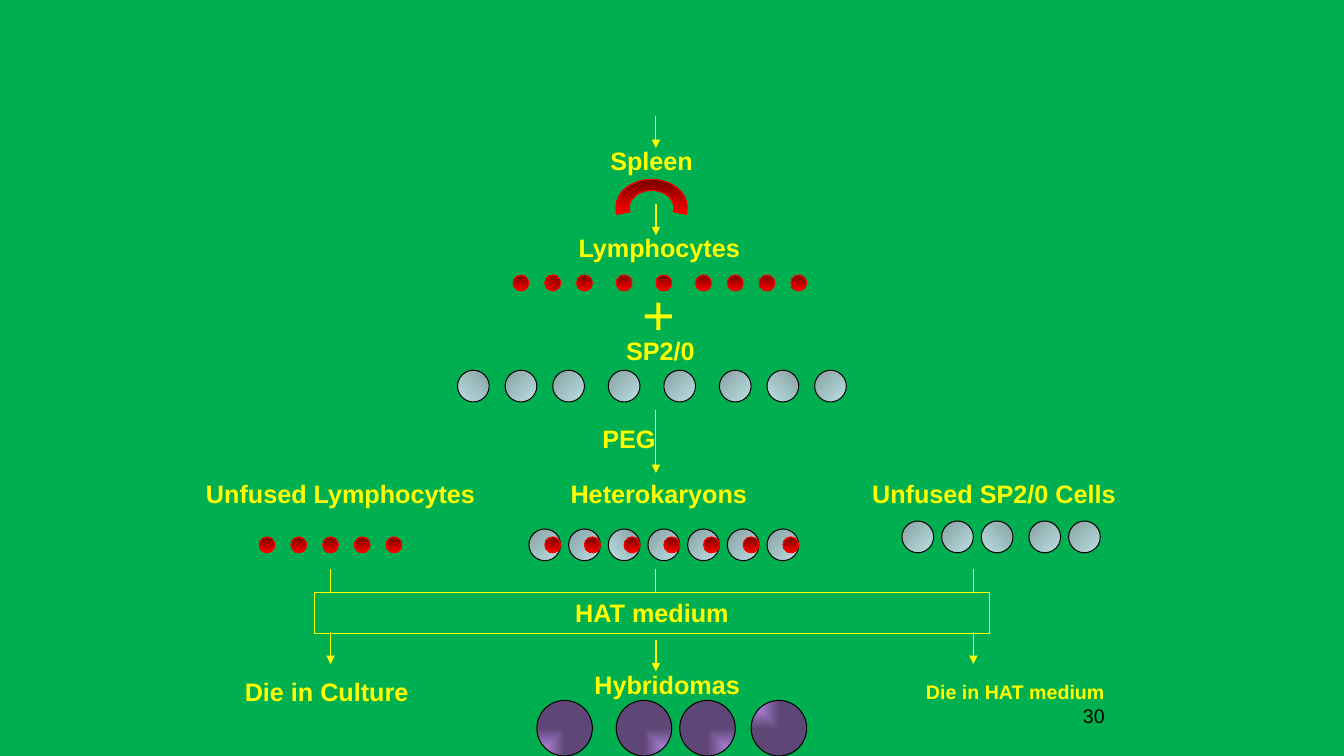
import math
from itertools import accumulate
from lxml import etree
from pptx import Presentation, util as u
from pptx.dml.color import RGBColor
from pptx.enum import shapes, text
from pptx.oxml import ns, parse_xml

GREEN = RGBColor(0x00, 0xB0, 0x50)
YELLOW = RGBColor(0xFF, 0xFF, 0x00)
BLACK = RGBColor(0x00, 0x00, 0x00)
RED = RGBColor(0xFF, 0x00, 0x00)
DARK_RED = RGBColor(0x76, 0x00, 0x00)
PALE = RGBColor(0xBB, 0xE0, 0xE3)
GREY = RGBColor(0x86, 0xA0, 0xA2)
LILAC = RGBColor(0xCC, 0x99, 0xFF)
PURPLE = RGBColor(0x5E, 0x47, 0x76)
LEFT, CENTER, RIGHT = text.PP_ALIGN.LEFT, text.PP_ALIGN.CENTER, text.PP_ALIGN.RIGHT

DOWN = '<a:lin ang="5400000" scaled="1"/>'
DIAGONAL = '<a:lin ang="2700000" scaled="1"/>'
DIAGONAL_UP = '<a:lin ang="18900000" scaled="1"/>'


def paint(shape, start, end, direction, outline):
    """Give a shape a two-colour gradient and a thin outline."""
    shape.shadow.inherit = False
    shape.line.color.rgb = outline
    shape.line.width = u.Pt(0.75)
    gradient = parse_xml(
        f'<a:gradFill {ns.nsdecls("a")} rotWithShape="1"><a:gsLst>'
        f'<a:gs pos="0"><a:srgbClr val="{start}"/></a:gs>'
        f'<a:gs pos="100000"><a:srgbClr val="{end}"/></a:gs>'
        f'</a:gsLst>{direction}</a:gradFill>')
    shape.line._ln.addprevious(gradient)


def write(frame, content, align, size=18, bold=True, color=YELLOW, new=False):
    """Write one run in the first paragraph or in a new one."""
    paragraph = frame.add_paragraph() if new else frame.paragraphs[0]
    paragraph.alignment = align
    run = paragraph.add_run()
    run.text = content
    run.font.name = "Arial"
    run.font.size = u.Pt(size)
    run.font.bold = bold
    run.font.color.rgb = color


presentation = Presentation()
presentation.slide_width, presentation.slide_height = u.Cm(33.87), u.Cm(19.05)
slide = presentation.slides.add_slide(presentation.slide_layouts[6])
slide.background.fill.solid()
slide.background.fill.fore_color.rgb = GREEN

# Spleen: a thick arch between two ellipses
points = []
for radius_x, radius_y, angles in ((0.9, 0.71, range(-14, 195, 4)),
                                   (0.56, 0.43, range(194, -15, -4))):
    for angle in angles:
        points.append((u.Cm(16.42 + radius_x * math.cos(math.radians(angle))),
                       u.Cm(5.23 - radius_y * math.sin(math.radians(angle)))))
builder = slide.shapes.build_freeform(*points[0])
builder.add_line_segments(points[1:], close=True)
paint(builder.convert_to_shape(), DARK_RED, RED, DOWN, RED)

# Rows of cells: left, top, diameter, gaps, colours, direction, outline, mirrored cells
lymphocyte = (DARK_RED, RED, DOWN, RED)
myeloma = (GREY, PALE, DIAGONAL, BLACK)
cell_rows = [
    (12.93, 6.93, 0.4, [0.8, 0.8, 1, 1, 1, 0.8, 0.8, 0.8], lymphocyte, [1]),
    (11.53, 9.33, 0.8, [1.2, 1.2, 1.4, 1.4, 1.4, 1.2, 1.2], myeloma, [0, 6]),
    (6.53, 13.53, 0.4, [0.8] * 4, lymphocyte, []),
    (13.33, 13.33, 0.8, [1] * 6, myeloma, [2]),
    (13.73, 13.53, 0.4, [1] * 6, lymphocyte, []),
    (22.73, 13.13, 0.8, [1, 1, 1.2, 1], myeloma, [2]),
]
for left, top, diameter, gaps, (start, end, direction, outline), mirrored in cell_rows:
    for index, x in enumerate(accumulate(gaps, initial=left)):
        cell = slide.shapes.add_shape(shapes.MSO_SHAPE.OVAL, u.Cm(x), u.Cm(top),
                                      u.Cm(diameter), u.Cm(diameter))
        if index in mirrored:
            paint(cell, end, start, DIAGONAL_UP, outline)
        else:
            paint(cell, start, end, direction, outline)

# Hybridomas, each lit from one corner
BOTTOM_LEFT, BOTTOM_RIGHT, TOP_LEFT = (0, 100, 100, 0), (100, 100, 0, 0), (0, 0, 100, 100)
for x, corner in ((13.53, BOTTOM_LEFT), (15.53, BOTTOM_RIGHT),
                  (17.13, BOTTOM_RIGHT), (18.93, TOP_LEFT)):
    hybridoma = slide.shapes.add_shape(shapes.MSO_SHAPE.OVAL, u.Cm(x), u.Cm(17.65),
                                       u.Cm(1.4), u.Cm(1.4))
    sides = " ".join(f'{side}="{value * 1000}"' for side, value in zip("ltrb", corner))
    focus = f'<a:path path="rect"><a:fillToRect {sides}/></a:path>'
    paint(hybridoma, LILAC, PURPLE, focus, BLACK)

# HAT medium bar
bar = slide.shapes.add_shape(shapes.MSO_SHAPE.RECTANGLE, u.Cm(7.93), u.Cm(14.93),
                             u.Cm(17), u.Cm(1.03))
bar.shadow.inherit = False
bar.fill.background()
bar.line.color.rgb = YELLOW
bar.line.width = u.Pt(0.75)
write(bar.text_frame, "HAT medium", CENTER)

# Arrows and plain lines: x, top, bottom, width, arrowhead
for x, top, bottom, width, arrow in (
        (16.53, 2.92, 3.73, 0.75, True), (16.53, 5.13, 5.93, 1.25, True),
        (16.53, 10.33, 11.92, 0.75, True), (16.53, 16.13, 16.92, 1.25, True),
        (8.33, 15.93, 16.73, 0.75, True), (24.53, 15.93, 16.73, 0.75, True),
        (8.33, 14.33, 14.93, 0.75, False), (16.53, 14.33, 14.93, 0.75, False),
        (24.53, 14.33, 14.93, 0.75, False)):
    line = slide.shapes.add_connector(shapes.MSO_CONNECTOR.STRAIGHT,
                                      u.Cm(x), u.Cm(top), u.Cm(x), u.Cm(bottom))
    line.line.color.rgb = YELLOW
    line.line.width = u.Pt(width)
    if arrow:
        etree.SubElement(line.line._ln, ns.qn("a:tailEnd"), type="triangle")
    etree.SubElement(line._element.spPr, ns.qn("a:effectLst"))

# Labels: text, left, top, width, height, wrap, alignment, size, bold
for content, left, top, width, height, wrap, align, size, bold in (
        ("Spleen", 15.13, 3.53, 2.6, 1.03, False, LEFT, 18, True),
        ("Lymphocytes", 14.33, 5.73, 4.8, 1.03, True, LEFT, 18, True),
        ("+", 15.93, 6.93, 1.35, 1.95, True, LEFT, 40, False),
        ("SP2/0", 15.53, 8.33, 2.23, 1.03, False, LEFT, 18, True),
        ("PEG", 14.93, 10.53, 1.86, 1.03, False, LEFT, 18, True),
        ("Unfused Lymphocytes", 4.93, 11.92, 7.31, 1.03, False, CENTER, 18, True),
        ("Heterokaryons", 14.13, 11.92, 5.13, 1.03, False, LEFT, 18, True),
        ("Unfused SP2/0 Cells", 21.73, 11.92, 6.66, 1.03, False, LEFT, 18, True),
        ("Hybridomas", 14.73, 16.73, 4.18, 1.03, False, LEFT, 18, True),
        ("Die in Culture", 5.92, 16.92, 6.73, 1.8, True, LEFT, 18, True),
        ("Die in HAT medium", 22.17, 17.02, 5.92, 1.32, True, RIGHT, 14, True)):
    label = slide.shapes.add_textbox(u.Cm(left), u.Cm(top), u.Cm(width), u.Cm(height))
    label.text_frame.word_wrap = wrap
    write(label.text_frame, content, align, size, bold)

# Slide number below the last label
write(label.text_frame, "30", RIGHT, 14, False, BLACK, new=True)

presentation.save("out.pptx")
